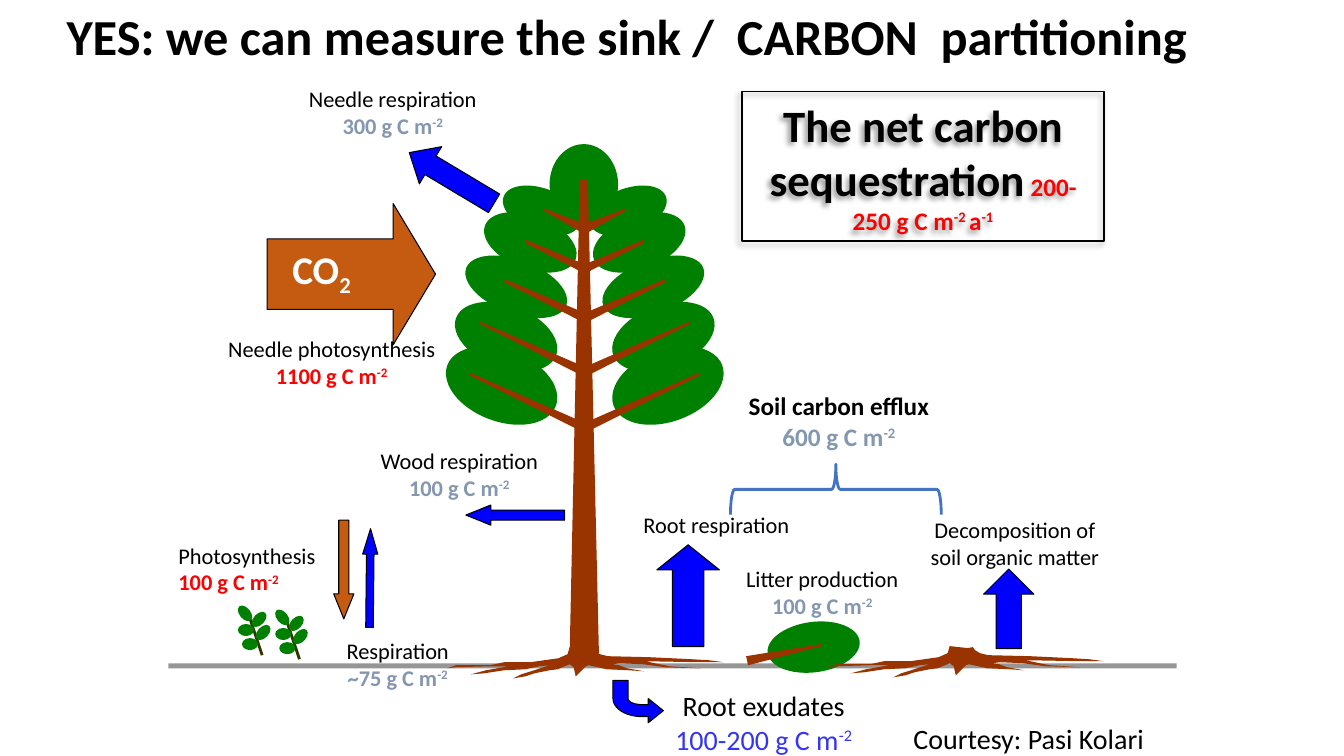
from math import cos, pi, sin

from lxml import etree
from pptx import Presentation
from pptx.dml.color import RGBColor
from pptx.enum.shapes import MSO_CONNECTOR, MSO_SHAPE
from pptx.enum.text import MSO_ANCHOR, PP_ALIGN
from pptx.oxml.ns import qn
from pptx.util import Inches, Pt

BLACK = RGBColor(0x00, 0x00, 0x00)
WHITE = RGBColor(0xFF, 0xFF, 0xFF)
RED = RGBColor(0xFF, 0x00, 0x00)
BLUE = RGBColor(0x00, 0x00, 0xFF)
VIOLET = RGBColor(0x34, 0x34, 0xF6)
SLATE = RGBColor(0x84, 0x97, 0xB0)
ORANGE = RGBColor(0xC5, 0x5A, 0x11)
GREEN = RGBColor(0x00, 0x80, 0x00)
BROWN = RGBColor(0x99, 0x33, 0x00)
STEM = RGBColor(0x33, 0x33, 0x00)
GREY = RGBColor(0x96, 0x96, 0x96)
BRACE = RGBColor(0x44, 0x72, 0xC4)


def paint(shape, fill=None, line=None, width=0.75):
    shape.shadow.inherit = False
    if fill is None:
        shape.fill.background()
    else:
        shape.fill.solid()
        shape.fill.fore_color.rgb = fill
    if line is None:
        shape.line.fill.background()
    else:
        shape.line.color.rgb = line
        shape.line.width = Pt(width)


def write(frame, lines, align=PP_ALIGN.CENTER):
    """Fill the frame with lines of runs: text, size, colour, bold, baseline in percent."""
    frame.word_wrap = True
    frame.text = "\n".join("" for _ in lines)
    for para, runs in zip(frame.paragraphs, lines):
        para.alignment = align
        for text, size, colour, bold, base in runs:
            run = para.add_run()
            run.text = text
            run.font.name = "Calibri"
            run.font.size = Pt(size)
            run.font.bold = bold
            run.font.color.rgb = colour
            if base:
                run.font._element.set("baseline", str(base * 1000))


prs = Presentation()
prs.slide_width, prs.slide_height = Inches(13.33), Inches(7.5)
slide = prs.slides.add_slide(prs.slide_layouts[5])
shapes = slide.shapes

title = shapes.title
title.left, title.top = Inches(0.56), Inches(0)
title.width, title.height = Inches(12.17), Inches(0.8)
title.text_frame.vertical_anchor = MSO_ANCHOR.TOP
write(title.text_frame,
      [[("YES: we can measure the sink /  CARBON  partitioning", 36, BLACK, True, 0)]],
      PP_ALIGN.LEFT)

ground = shapes.add_shape(MSO_SHAPE.RECTANGLE, Inches(1.67), Inches(6.58), Inches(10), Inches(0.05))
paint(ground, GREY)

# Foliage: the crown mirrors around the trunk, the two seedlings share one form
tree = shapes.add_group_shape().shapes
litter = shapes.add_group_shape().shapes
AXIS = 5.8
leaves = [(tree, 5.39, 1.49, 0.8, 0.68, 90), (litter, 7.61, 6.17, 0.92, 0.5, -7.4)]
for x, y, w, h in [(4.4, 3.47, 1.15, 0.71), (4.59, 2.58, 1.06, 0.53), (4.97, 1.87, 0.8, 0.44),
                   (4.49, 3.03, 1.06, 0.62), (4.78, 2.14, 0.96, 0.53)]:
    leaves += [(tree, x, y, w, h, 20.6), (tree, 2 * AXIS - x - w, y, w, h, -20.6)]

for dx, dy in [(0, 0), (0.37, 0.04)]:
    plant = shapes.add_group_shape().shapes
    stem = plant.add_connector(MSO_CONNECTOR.STRAIGHT, Inches(2.48 + dx), Inches(6.14 + dy),
                               Inches(2.6 + dx), Inches(6.5 + dy))
    stem.line.color.rgb = STEM
    stem.line.width = Pt(2)
    etree.SubElement(stem._element.spPr, qn("a:effectLst"))
    for x, y, w, h, turn in [(2.36, 6.19, 0.16, 0.12, 0), (2.4, 6.33, 0.16, 0.12, 0),
                             (2.34, 6.03, 0.18, 0.11, 50.6), (2.48, 6.09, 0.18, 0.11, -46.9),
                             (2.52, 6.22, 0.18, 0.11, -46.9)]:
        leaves.append((plant, x + dx, y + dy, w, h, turn))

for home, x, y, w, h, turn in leaves:
    leaf = home.add_shape(MSO_SHAPE.OVAL, Inches(x), Inches(y), Inches(w), Inches(h))
    leaf.rotation = turn
    paint(leaf, GREEN)

# Wood and the exudate arrow, as outlines
roots = [
    (5.65, 6.42), (5.63, 6.49), (5.54, 6.53), (5.26, 6.57), (5, 6.57), (4.86, 6.6), (4.52, 6.6),
    (4.44, 6.63), (4.52, 6.62), (4.86, 6.61), (5.05, 6.61), (4.82, 6.65), (4.67, 6.69),
    (4.8, 6.68), (5, 6.65), (5.21, 6.64), (5.35, 6.61), (5.45, 6.6), (5.33, 6.64), (5.17, 6.69),
    (5.09, 6.73), (5.21, 6.71), (5.3, 6.68), (5.45, 6.65), (5.53, 6.64), (5.65, 6.59),
    (5.69, 6.62), (5.71, 6.71), (5.76, 6.66), (5.81, 6.61), (5.84, 6.6), (6.02, 6.64),
    (6.24, 6.65), (6.39, 6.66), (6.22, 6.63), (6.14, 6.6), (6.07, 6.59), (6.15, 6.58),
    (6.38, 6.59), (6.6, 6.62), (6.94, 6.63), (6.64, 6.61), (6.4, 6.56), (6.94, 6.57),
    (7.18, 6.57), (7.03, 6.55), (6.86, 6.54), (6.44, 6.52), (6.03, 6.51), (5.95, 6.49),
    (5.9, 6.46), (5.88, 6.43), (5.83, 6.44)]
wood = [
    (shapes, roots),
    (shapes, [(x + 3.77, y - 0.01) for x, y in roots]),
    (litter, [(7.4, 6.51), (8.14, 6.39), (8.15, 6.41), (7.42, 6.6)]),
    (tree, [(5.65, 6.48), (5.75, 1.78), (5.83, 1.78), (5.94, 6.48)])]
for branch in [[(5.79, 4.2), (6.93, 3.7), (6.95, 3.72), (5.83, 4.28)],
               [(5.78, 3.65), (6.84, 3.19), (6.85, 3.21), (5.82, 3.73)],
               [(5.79, 3.11), (6.59, 2.77), (6.6, 2.8), (5.83, 3.19)],
               [(5.76, 2.64), (6.38, 2.38), (6.39, 2.41), (5.79, 2.72)],
               [(5.75, 2.24), (6.2, 2.07), (6.21, 2.09), (5.79, 2.33)]]:
    wood += [(tree, branch), (tree, [(2 * AXIS - x, y) for x, y in branch])]

turns = [pi / 2 * step / 12 for step in range(13)]
outer = [(6.37 - 0.29 * sin(t), 6.93 + 0.18 * cos(t)) for t in turns]
inner = [(6.37 - 0.14 * cos(t), 6.93 + 0.06 * sin(t)) for t in turns]
bend = [(6.58, 7.05), (6.43, 7.17), (6.43, 7.11), *outer, (6.08, 6.75), (6.23, 6.75),
        *inner, (6.43, 6.99), (6.43, 6.93)]

outlines = [(home, points, BROWN, None) for home, points in wood]
outlines.append((shapes, bend, BLUE, BLACK))
for home, points, fill, line in outlines:
    spots = [(Inches(x), Inches(y)) for x, y in points]
    pen = home.build_freeform(*spots[0])
    pen.add_line_segments(spots[1:])
    paint(pen.convert_to_shape(), fill, line)

# Flux arrows: left, top, width, height, rotation, head length, fill
for x, y, w, h, turn, head, fill in [
        (2.65, 2.02, 1.67, 1.4, 0, 0.3, ORANGE),
        (6.32, 5.6, 1.01, 0.62, 270, 0.4, BLUE),
        (9.61, 5.79, 0.79, 0.5, 270, 0.5, BLUE),
        (3.99, 1.55, 0.98, 0.43, 210.9, 0.57, BLUE),
        (4.62, 5.01, 0.98, 0.2, 180, 1.24, BLUE),
        (2.92, 5.55, 0.98, 0.2, 90, 1.24, ORANGE),
        (3.18, 5.66, 0.98, 0.15, 270.6, 1.68, BLUE)]:
    arrow = shapes.add_shape(MSO_SHAPE.RIGHT_ARROW, Inches(x), Inches(y), Inches(w), Inches(h))
    arrow.adjustments[1] = head
    arrow.rotation = turn
    paint(arrow, fill, BLACK)

brace = shapes.add_shape(MSO_SHAPE.LEFT_BRACE, Inches(8.04), Inches(3.81), Inches(0.5), Inches(2.09))
brace.rotation = 90
paint(brace, None, BRACE, 2)

# Labels: plain ones first, then a name above an amount per square metre
MID, LEFT = PP_ALIGN.CENTER, PP_ALIGN.LEFT
labels = [
    (6.27, 5.02, 1.67, 0.37, MID, [[("Root respiration", 16, BLACK, False, 0)]]),
    (9.12, 5.07, 1.89, 0.64, MID, [[("Decomposition of soil organic matter", 16, BLACK, False, 0)]]),
    (9.06, 7.1, 3.11, 0.44, LEFT, [[("Courtesy: Pasi Kolari", 20, BLACK, False, 0)]]),
    (2.9, 2.41, 0.77, 0.57, LEFT, [[("CO", 28, WHITE, True, 0), ("2", 28, WHITE, True, -25)]])]
for x, y, w, h, align, name, amount, size, colour, strong, bold in [
        (2.95, 0.79, 1.89, 0.64, MID, "Needle respiration", "300", 16, SLATE, False, True),
        (2.15, 3.27, 2.28, 0.64, MID, "Needle photosynthesis", "1100", 16, RED, False, True),
        (3.66, 4.38, 1.79, 0.64, MID, "Wood respiration", "100", 16, SLATE, False, True),
        (7.27, 3.82, 2.1, 0.71, MID, "Soil carbon efflux", "600", 18, SLATE, True, True),
        (7.24, 5.55, 1.83, 0.64, MID, "Litter production", "100", 16, SLATE, False, True),
        (3.12, 6.27, 1.65, 0.64, MID, "Respiration", "~75", 16, SLATE, False, True),
        (1.77, 5.32, 1.73, 0.64, LEFT, "Photosynthesis", "100", 16, RED, False, True),
        (6.51, 6.78, 2.13, 0.77, MID, "Root exudates", "100-200", 20, VIOLET, False, False)]:
    labels.append((x, y, w, h, align, [
        [(name, size, BLACK, strong, 0)],
        [(amount + " g C m", size, colour, bold, 0), ("-2", size, colour, bold, 30)]]))

for x, y, w, h, align, lines in labels:
    frame = shapes.add_textbox(Inches(x), Inches(y), Inches(w), Inches(h)).text_frame
    frame.margin_left = frame.margin_right = 0
    frame.vertical_anchor = MSO_ANCHOR.MIDDLE
    write(frame, lines, align)

net = shapes.add_shape(MSO_SHAPE.RECTANGLE, Inches(7.36), Inches(0.91), Inches(3.59), Inches(1.48))
paint(net, None, BLACK, 1)
net.text_frame.vertical_anchor = MSO_ANCHOR.MIDDLE
write(net.text_frame, [[
    ("The net carbon sequestration", 32, BLACK, True, 0), (" 200-250 g C m", 18, RED, True, 0),
    ("-2 ", 18, RED, True, 30), ("a", 18, RED, True, 0), ("-1", 18, RED, True, 30)]])
shade = etree.SubElement(net._element.spPr.find(qn("a:effectLst")), qn("a:outerShdw"),
                         blurRad=str(Pt(4)), dist=str(Pt(3)), dir="8100000", rotWithShape="0")
tint = etree.SubElement(shade, qn("a:srgbClr"), val="000000")
etree.SubElement(tint, qn("a:alpha"), val="40000")

prs.save("out.pptx")
